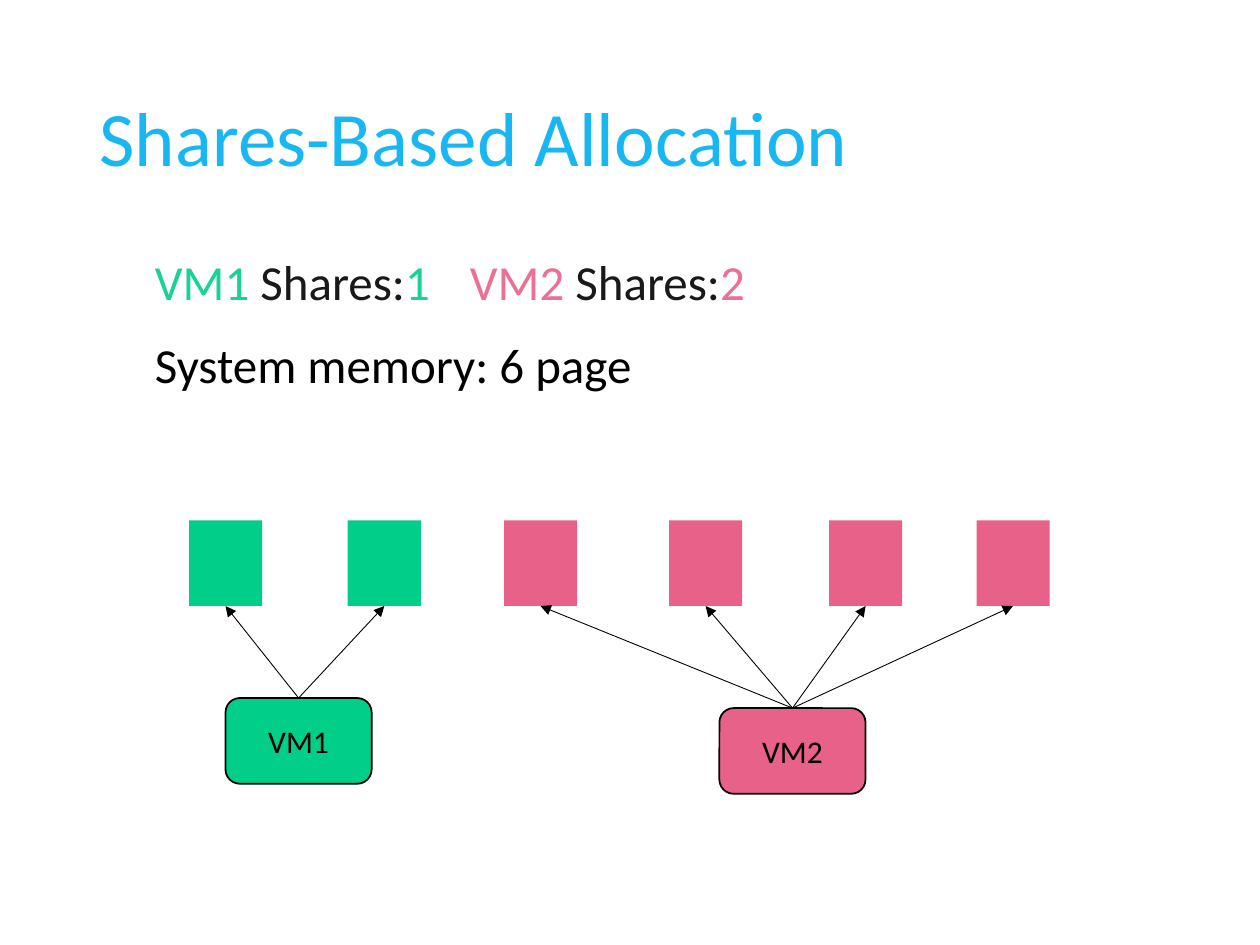
from dataclasses import dataclass

from lxml.etree import SubElement
from pptx import Presentation
from pptx.dml.color import RGBColor as Color
from pptx.enum.shapes import MSO_CONNECTOR as Connector, MSO_SHAPE as Shape
from pptx.enum.text import MSO_ANCHOR as Anchor, MSO_AUTO_SIZE as AutoSize, PP_ALIGN as Align
from pptx.oxml.ns import qn
from pptx.util import Inches, Pt

COLUMNS, ROWS = 100, 75
TOP_SITE, BOTTOM_SITE = 0, 2


@dataclass(frozen=True)
class Theme:
    font: str = "Calibri"
    blue: str = "00B0F0"
    green: str = "00CE89"
    pink: str = "E86189"
    black: str = "000000"
    title_size: int = 44
    body_size: int = 28
    label_size: int = 18
    outline: float = 1
    arrow: float = 0.5
    soft: int = 90  # percent opacity of muted text


class SlideBuilder:
    def __init__(self, deck, theme):
        self.theme = theme
        self.column = deck.slide_width / COLUMNS
        self.row = deck.slide_height / ROWS
        self.page = deck.slides.add_slide(deck.slide_layouts[1])

    def area(self, left, top, width, height):
        """Turn columns and rows into slide lengths."""
        return (round(left * self.column), round(top * self.row),
                round(width * self.column), round(height * self.row))

    def span(self, para, text, size, color, opacity=100):
        span = para.add_run()
        span.text = text
        span.font.name = self.theme.font
        span.font.size = Pt(size)
        span.font.color.rgb = Color.from_string(color)
        if opacity < 100:
            shade = span.font.fill._xPr.find(".//" + qn("a:srgbClr"))
            SubElement(shade, qn("a:alpha"), val=str(opacity * 1000))

    def place(self, box, area, anchor):
        box.left, box.top, box.width, box.height = self.area(*area)
        frame = box.text_frame
        frame.word_wrap = True
        frame.auto_size = AutoSize.NONE
        frame.vertical_anchor = anchor
        return frame

    def title(self, text, area):
        para = self.place(self.page.shapes.title, area, Anchor.MIDDLE).paragraphs[0]
        para.alignment = Align.LEFT
        para.line_spacing = 0.9
        self.span(para, text, self.theme.title_size, self.theme.blue, self.theme.soft)

    def body(self, lines, area, tab):
        """Fill the body with lines of (text, colour, opacity) and one tab stop."""
        frame = self.place(self.page.placeholders[1], area, Anchor.TOP)
        for index, line in enumerate(lines):
            para = frame.add_paragraph() if index else frame.paragraphs[0]
            para.line_spacing = 1.2
            para.space_before = Pt(7.5)
            props = para._p.get_or_add_pPr()
            props.set("marL", "0")
            props.set("indent", "0")
            SubElement(props, qn("a:buNone"))
            stops = SubElement(props, qn("a:tabLst"))
            SubElement(stops, qn("a:tab"), pos=str(round(tab * self.column)), algn="l")
            for text, color, opacity in line:
                self.span(para, text, self.theme.body_size, color, opacity)

    def block(self, kind, area, color):
        block = self.page.shapes.add_shape(kind, *self.area(*area))
        block.shadow.inherit = False
        block.fill.solid()
        block.fill.fore_color.rgb = Color.from_string(color)
        block.line.fill.background()
        return block

    def machine(self, name, area, color):
        machine = self.block(Shape.ROUNDED_RECTANGLE, area, color)
        machine.line.color.rgb = Color.from_string(self.theme.black)
        machine.line.width = Pt(self.theme.outline)
        machine.text_frame.vertical_anchor = Anchor.MIDDLE
        para = machine.text_frame.paragraphs[0]
        para.alignment = Align.CENTER
        self.span(para, name, self.theme.label_size, self.theme.black)
        return machine

    def arrow(self, source, target):
        arrow = self.page.shapes.add_connector(Connector.STRAIGHT, 0, 0, 0, 0)
        arrow.begin_connect(source, TOP_SITE)
        arrow.end_connect(target, BOTTOM_SITE)
        arrow.line.color.rgb = Color.from_string(self.theme.black)
        arrow.line.width = Pt(self.theme.arrow)
        SubElement(arrow.line._get_or_add_ln(), qn("a:tailEnd"), type="triangle")
        SubElement(arrow._element.spPr, qn("a:effectLst"))

    def allocation(self, name, color, left, top, page_lefts):
        """Draw a machine with arrows to the memory pages it owns."""
        memory = [self.block(Shape.RECTANGLE, (x, 41.3, 5.8, 6.8), color)
                  for x in page_lefts]
        machine = self.machine(name, (left, top, 11.6, 6.8), color)
        for block in memory:
            self.arrow(machine, block)


def main():
    deck = Presentation()
    deck.slide_width, deck.slide_height = Inches(10), Inches(7.5)
    theme = Theme()
    slide = SlideBuilder(deck, theme)

    slide.title("Shares-Based Allocation", (6.9, 4, 86.2, 14.5))
    shares = [
        ("VM1", theme.green, theme.soft),
        (" Shares:", theme.black, theme.soft),
        ("1\t", theme.green, theme.soft),
        ("VM2", theme.pink, theme.soft),
        (" Shares:", theme.black, theme.soft),
        ("2", theme.pink, theme.soft),
    ]
    memory = [("System memory: 6 page", theme.black, 100)]
    slide.body([shares, memory], (11.3, 18.5, 76.7, 52.5), tab=38.5)

    slide.allocation("VM1", theme.green, 17.9, 55.4, (15, 27.6))
    slide.allocation("VM2", theme.pink, 57.1, 56.2, (40, 53.1, 65.8, 77.5))

    deck.save("out.pptx")


if __name__ == "__main__":
    main()
